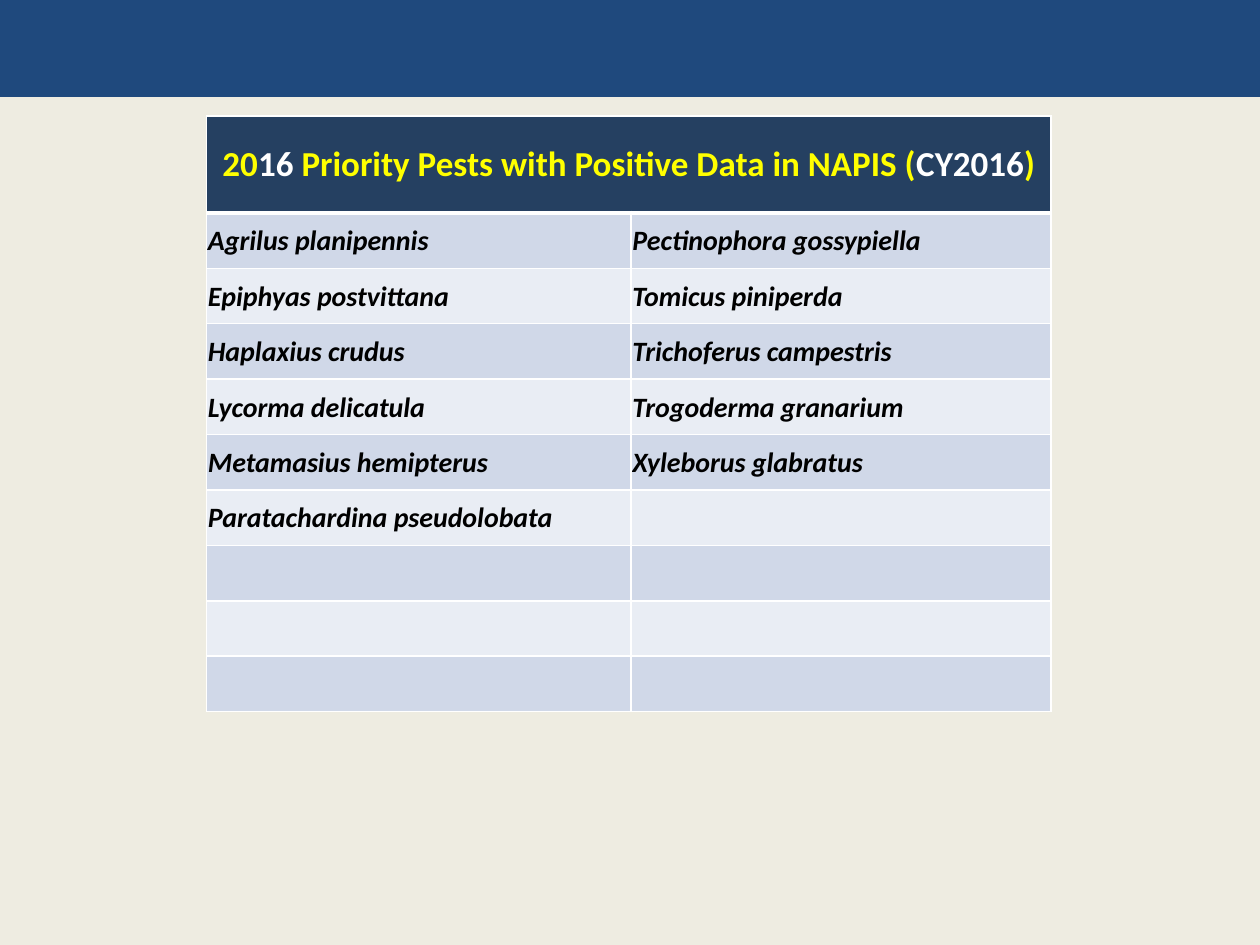
from lxml import etree
from pptx import Presentation
from pptx.dml.color import RGBColor
from pptx.enum.shapes import MSO_SHAPE
from pptx.enum.text import MSO_ANCHOR, PP_ALIGN
from pptx.oxml.ns import qn
from pptx.util import Inches, Pt

RECTANGLE = MSO_SHAPE.RECTANGLE
MIDDLE = MSO_ANCHOR.MIDDLE
CENTER = PP_ALIGN.CENTER

YELLOW, WHITE, BLACK = "FFFF00", "FFFFFF", "000000"
BANDS = ("D0D8E8", "E9EDF4")
HEADING = (
    ("20", YELLOW),
    ("16", WHITE),
    (" Priority Pests with Positive Data in NAPIS (", YELLOW),
    ("CY2016", WHITE),
    (")", YELLOW),
)
PESTS = (
    ("Agrilus planipennis", "Pectinophora gossypiella"),
    ("Epiphyas postvittana", "Tomicus piniperda"),
    ("Haplaxius crudus", "Trichoferus campestris"),
    ("Lycorma delicatula", "Trogoderma granarium"),
    ("Metamasius hemipterus", "Xyleborus glabratus"),
    ("Paratachardina pseudolobata", ""),
    ("", ""),
    ("", ""),
    ("", ""),
)
COLUMN_WIDTHS = (3.37, 3.33)
HEADING_HEIGHT, PEST_HEIGHT = 0.77, 0.44
HEADING_FONT = {"name": "Calibri", "size": Pt(20), "bold": True}
PEST_FONT = {"name": "Calibri", "size": Pt(16), "bold": True, "italic": True}
PEST_MARGINS = {
    "margin_left": Inches(0.01),
    "margin_right": Inches(0.01),
    "margin_top": Inches(0.01),
    "margin_bottom": 0,
}


def color(value):
    return RGBColor.from_string(value)


def apply(target, values):
    for name, value in values.items():
        setattr(target, name, value)


class PestSlide:
    """Holds the table style and the page, and draws each kind of element."""

    def __init__(self, deck):
        self.page = deck.slides.add_slide(deck.slide_layouts[6])
        self.line_color = WHITE

    def background(self, fill):
        paint = self.page.background.fill
        paint.solid()
        paint.fore_color.rgb = color(fill)

    def band(self, left, top, width, height, fill):
        shape = self.page.shapes.add_shape(
            RECTANGLE, Inches(left), Inches(top), Inches(width), Inches(height)
        )
        shape.shadow.inherit = False
        shape.fill.solid()
        shape.fill.fore_color.rgb = color(fill)
        shape.line.fill.background()

    def borders(self, cell, top=1, bottom=1):
        properties = cell._tc.get_or_add_tcPr()
        for side, points in (("L", 1), ("R", 1), ("T", top), ("B", bottom)):
            line = etree.SubElement(properties, qn(f"a:ln{side}"), w=str(Pt(points)))
            paint = etree.SubElement(line, qn("a:solidFill"))
            etree.SubElement(paint, qn("a:srgbClr"), val=self.line_color)

    def cell(self, cell, spans, fill, font, **edges):
        self.borders(cell, **edges)
        cell.fill.solid()
        cell.fill.fore_color.rgb = color(fill)
        cell.vertical_anchor = MIDDLE
        para = cell.text_frame.paragraphs[0]
        for text, text_color in spans:
            span = para.add_run()
            span.text = text
            apply(span.font, font)
            span.font.color.rgb = color(text_color)

    def table(self, left, top):
        height = HEADING_HEIGHT + PEST_HEIGHT * len(PESTS)
        table = self.page.shapes.add_table(
            len(PESTS) + 1, len(COLUMN_WIDTHS), Inches(left), Inches(top),
            Inches(sum(COLUMN_WIDTHS)), Inches(height),
        ).table
        for column, width in zip(table.columns, COLUMN_WIDTHS):
            column.width = Inches(width)
        for index, row in enumerate(table.rows):
            row.height = Inches(PEST_HEIGHT if index else HEADING_HEIGHT)

        heading = table.cell(0, 0)
        heading.merge(table.cell(0, 1))
        self.cell(heading, HEADING, "254061", HEADING_FONT, bottom=3)
        self.borders(table.cell(0, 1), bottom=3)
        heading.text_frame.paragraphs[0].alignment = CENTER

        for row, names in enumerate(PESTS, start=1):
            for column, name in enumerate(names):
                cell = table.cell(row, column)
                spans = [(name, BLACK)] if name else []
                fill = BANDS[(row - 1) % 2]
                self.cell(cell, spans, fill, PEST_FONT, top=3 if row == 1 else 1)
                apply(cell, PEST_MARGINS)


def main():
    deck = Presentation()
    deck.slide_width, deck.slide_height = Inches(10), Inches(7.5)
    slide = PestSlide(deck)
    slide.background("EEECE1")
    slide.band(0, 0, 10, 0.77, "1F497D")
    slide.table(1.64, 0.92)
    deck.save("out.pptx")


if __name__ == "__main__":
    main()
